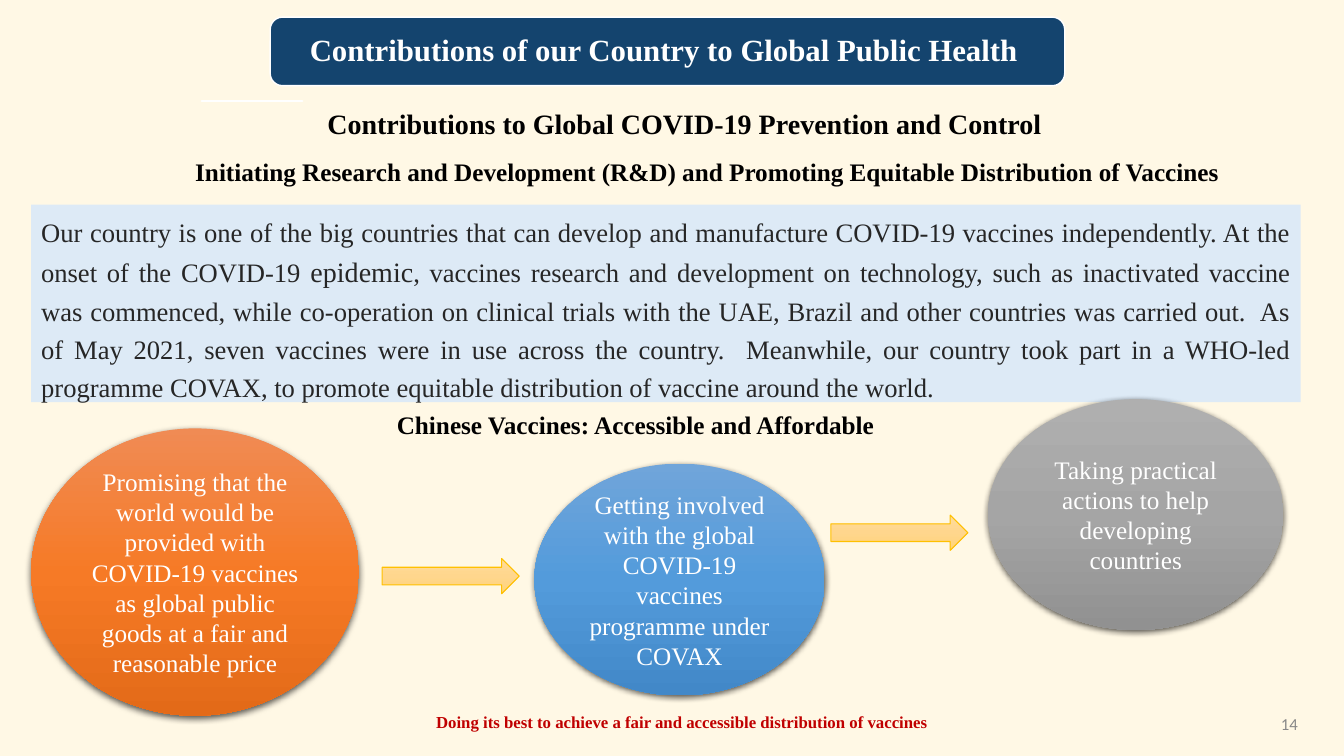
from copy import deepcopy

from lxml import etree
from pptx import Presentation
from pptx.dml.color import RGBColor
from pptx.enum.shapes import MSO_SHAPE
from pptx.enum.text import MSO_ANCHOR, PP_ALIGN
from pptx.oxml.ns import qn
from pptx.util import Inches, Pt

ROUNDED = MSO_SHAPE.ROUNDED_RECTANGLE
RECTANGLE = MSO_SHAPE.RECTANGLE
OVAL = MSO_SHAPE.OVAL
RIGHT_ARROW = MSO_SHAPE.RIGHT_ARROW
TOP, MIDDLE = MSO_ANCHOR.TOP, MSO_ANCHOR.MIDDLE
CENTER, RIGHT, JUSTIFY = PP_ALIGN.CENTER, PP_ALIGN.RIGHT, PP_ALIGN.JUSTIFY
SERIF = "Times New Roman"

STATEMENT = [
    ("Our country is one of the big countries that can develop and manufacture COVID-19 "
     "vaccines independently. At the onset of the COVID-19 ", 19),
    ("epidemic", 20),
    (", vaccines research and development on technology, such as inactivated vaccine was "
     "commenced, while co-operation on clinical trials with the UAE, Brazil and other "
     "countries was carried out.  As of May 2021, seven vaccines were in use across the "
     "country.  Meanwhile, our country took part in a WHO-led programme COVAX, to promote "
     "equitable distribution of vaccine around the world.", 19),
]
# Box within the steps region, gradient colours, text
STEPS = [
    ((0, 0.29, 3.25, 2.85), ("F08B54", "F67A26", "E36A18"),
     "Promising that the world would be provided with COVID-19 vaccines as global public "
     "goods at a fair and reasonable price"),
    ((4.99, 0.64, 2.88, 2.3), ("70A5DA", "539BDB", "4288C8"),
     "Getting involved with the global COVID-19 vaccines programme under COVAX"),
    ((9.49, 0, 2.93, 2.29), ("AFAFAF", "A5A5A5", "919191"),
     "Taking practical actions to help developing countries"),
]
ARROW_BOXES = [(3.48, 1.58, 1.36, 0.35), (7.93, 1.15, 1.36, 0.35)]
ARROW_COLOURS = ("FFDC9B", "FFD68D", "FFD478")


def colour(value):
    return RGBColor.from_string(value)


def inside(region, box):
    """Turn a box measured from a region's corner into slide inches."""
    return (region[0] + box[0], region[1] + box[1], box[2], box[3])


def write(shape, text, size, ink, bold=False, align=CENTER, anchor=MIDDLE,
          font=SERIF, spacing=1.0):
    frame = shape.text_frame
    frame.word_wrap = True
    frame.vertical_anchor = anchor
    paragraph = frame.paragraphs[0]
    paragraph.alignment = align
    paragraph.line_spacing = spacing
    paragraph.font.name = font
    paragraph.font.size = Pt(size)
    paragraph.font.bold = bold
    paragraph.font.color.rgb = colour(ink)
    paragraph.add_run().text = text
    return paragraph


def add_label(slide, box, text, size, ink, **style):
    label = slide.shapes.add_textbox(*map(Inches, box))
    write(label, text, size, ink, **style)


def paint(shape, fill, line=None, width=1):
    """Fill with one colour, or with a downward gradient of three."""
    shape.shadow.inherit = False
    if isinstance(fill, str):
        shape.fill.solid()
        shape.fill.fore_color.rgb = colour(fill)
    else:
        shape.fill.gradient()
        shape.fill.gradient_angle = 270
        stop_list = shape._element.spPr.find(".//" + qn("a:gsLst"))
        stop_list.append(deepcopy(stop_list[-1]))
        for index, stop in enumerate(shape.fill.gradient_stops):
            stop.color.rgb = colour(fill[index])
            stop.position = index / 2
    if line:
        shape.line.color.rgb = colour(line)
        shape.line.width = Pt(width)
    else:
        shape.line.fill.background()


def add_panel(slide, kind, box, fill, line=None, width=1):
    shape = slide.shapes.add_shape(kind, *map(Inches, box))
    paint(shape, fill, line, width)
    return shape


def drop_shadow(shape):
    effects = shape._element.spPr.find(qn("a:effectLst"))
    shadow = etree.SubElement(effects, qn("a:outerShdw"), blurRad=str(Pt(4.5)),
                              dist=str(Pt(1.5)), dir="5400000", algn="ctr", rotWithShape="0")
    black = etree.SubElement(shadow, qn("a:srgbClr"), val="000000")
    etree.SubElement(black, qn("a:alpha"), val="63000")


def add_chevron(slide, box):
    left, top, width, height = box
    upper = [(0, 0.03), (0.02, 0), (0.46, 0), (0.49, 0.01), (0.51, 0.02),
             (0.65, 0.22), (0.66, 0.24)]
    notch = [(0.15, 0.26), (0.16, 0.24), (0.15, 0.22)]
    lower = [(x, height - y) for x, y in reversed(upper[:-1])]
    points = [(left + x, top + y) for x, y in upper + lower + notch]
    builder = slide.shapes.build_freeform(*points[0], scale=Inches(1))
    builder.add_line_segments(points[1:], close=True)
    paint(builder.convert_to_shape(), "FDB42A", "FFFFFF", 1.5)


def add_header(slide, region):
    # Title banner
    banner = add_panel(slide, ROUNDED, inside(region, (0.98, 0, 7.88, 0.68)),
                       "14446E", "FFFFFF")
    banner.adjustments[0] = 0.18
    write(banner, "Contributions of our Country to Global Public Health ", 22, "FFFFFF",
          bold=True, spacing=0.9)
    # Section heading with its marker
    add_chevron(slide, inside(region, (0.51, 0.81, 0.67, 0.48)))
    add_label(slide, inside(region, (1.32, 0.83, 7.54, 0.44)),
              "Contributions to Global COVID-19 Prevention and Control", 20, "000000",
              bold=True)
    add_label(slide, inside(region, (0, 1.36, 10.63, 0.37)),
              "Initiating Research and Development (R&D) and Promoting Equitable "
              "Distribution of Vaccines", 18, "000000", bold=True, spacing=0.9)


def add_statement(slide, region):
    panel = add_panel(slide, RECTANGLE, region, "DDEAF6")
    (opening, base_size), *rest = STATEMENT
    paragraph = write(panel, opening, base_size, "262626", align=JUSTIFY, anchor=TOP,
                      spacing=1.2)
    for text, size in rest:
        run = paragraph.add_run()
        run.text = text
        if size != base_size:
            run.font.size = Pt(size)


def add_steps(slide, region):
    for box, colours, text in STEPS:
        oval = add_panel(slide, OVAL, inside(region, box), colours)
        drop_shadow(oval)
        write(oval, text, 18, "FFFFFF")
    for box in ARROW_BOXES:
        add_panel(slide, RIGHT_ARROW, inside(region, box), ARROW_COLOURS, "FFC000", 0.75)
    add_label(slide, inside(region, (3.37, 0.05, 5.31, 0.57)),
              "Chinese Vaccines: Accessible and Affordable ", 18, "000000",
              bold=True, anchor=TOP)


def add_footer(slide, region):
    add_label(slide, inside(region, (0, 0.03, 5.59, 0.37)),
              "Doing its best to achieve a fair and accessible distribution of vaccines",
              12, "C00000", bold=True, anchor=TOP)
    add_label(slide, inside(region, (6, 0, 3, 0.4)), "14", 12, "888888",
              align=RIGHT, font="Calibri")


def main():
    presentation = Presentation()
    presentation.slide_width = Inches(13.33)
    presentation.slide_height = Inches(7.5)
    slide = presentation.slides.add_slide(presentation.slide_layouts[6])
    slide.background.fill.solid()
    slide.background.fill.fore_color.rgb = colour("FFF8E5")

    add_header(slide, (1.7, 0.17, 10.63, 1.73))
    add_statement(slide, (0.31, 2.03, 12.59, 1.96))
    add_steps(slide, (0.31, 3.96, 12.42, 3.14))
    add_footer(slide, (3.97, 6.98, 9, 0.4))
    presentation.save("out.pptx")


if __name__ == "__main__":
    main()
